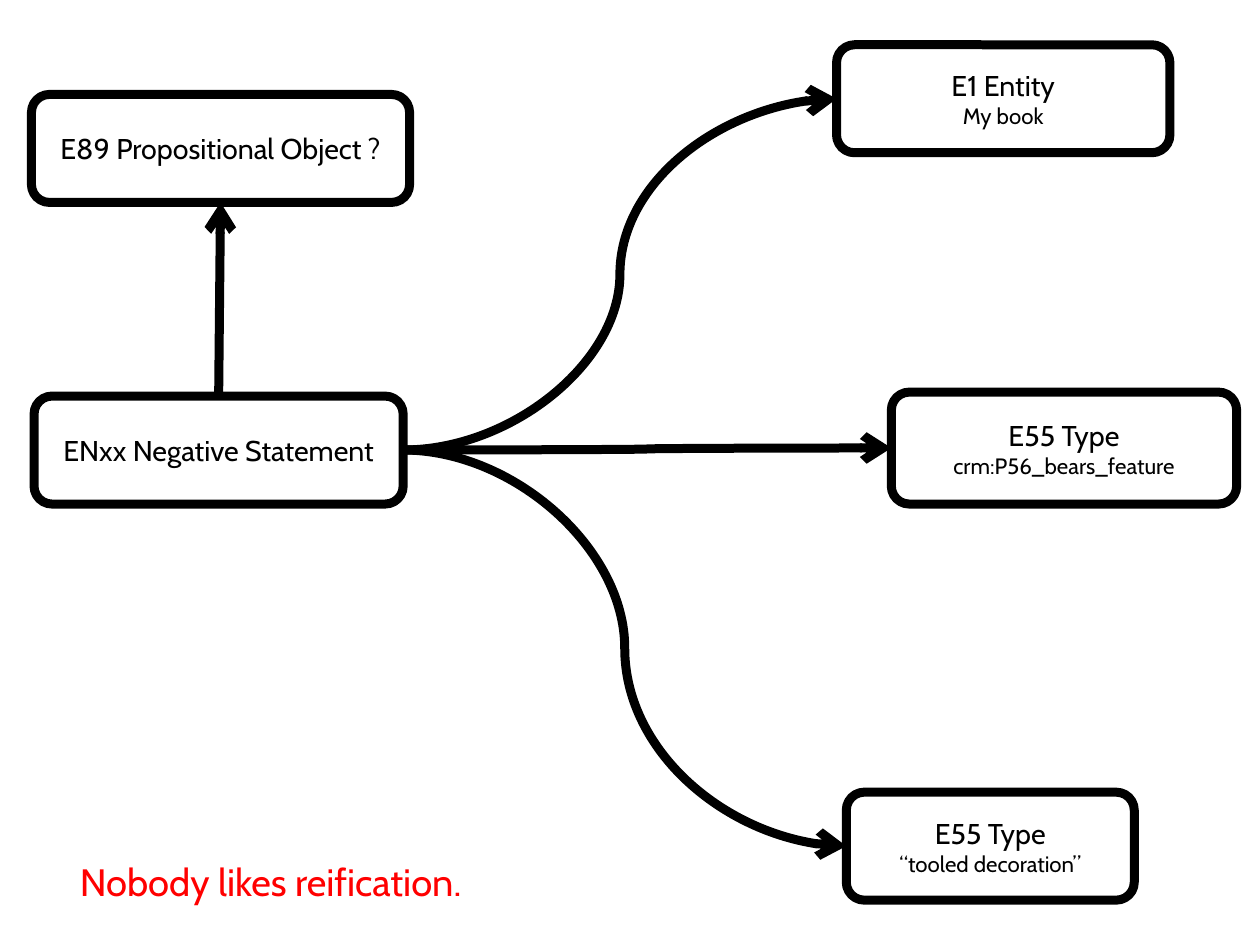
import pptx
import pptx.util
import pptx.dml.color
import pptx.enum.shapes
import pptx.enum.text
import pptx.oxml
import pptx.oxml.ns

Pt = pptx.util.Pt
BLACK, RED = "000000", "FF0000"
FONT = "Cabin"
STROKE = 5.67
CORNER = 11.3

ENTITIES = {
    "statement": (["ENxx Negative Statement"], (21.5, 249.5, 232.5, 68)),
    "proposition": (["E89 Propositional Object ?"], (19.8, 59.5, 238.2, 68)),
    "book": (["E1 Entity", "My book"], (527, 28.2, 210, 68)),
    "property": (["E55 Type", "crm:P56_bears_feature"], (561.5, 247, 217.5, 70.5)),
    "decoration": (["E55 Type", "“tooled decoration”"], (533.1, 499, 181.4, 68)),
}
TOP, LEFT, BOTTOM, RIGHT = range(4)
RELATIONS = [
    ("decoration", "CURVE", RIGHT, LEFT),
    ("book", "CURVE", RIGHT, LEFT),
    ("property", "CURVE", RIGHT, LEFT),
    ("proposition", "STRAIGHT", TOP, BOTTOM),
]
REMARK = ("Nobody likes reification.", (43.2, 537.4, 277.2, 33.8))

SLIDE_FORMAT = {"slide_width": Pt(793.7), "slide_height": Pt(595.28)}
ENTITY_FRAME = {
    "margin_left": Pt(10), "margin_right": Pt(10),
    "margin_top": Pt(6.5), "margin_bottom": Pt(6.5),
    "word_wrap": False,
    "vertical_anchor": pptx.enum.text.MSO_ANCHOR.MIDDLE,
}
REMARK_FRAME = {
    "word_wrap": False,
    "auto_size": pptx.enum.text.MSO_AUTO_SIZE.SHAPE_TO_FIT_TEXT,
}


def color(hex_value):
    return pptx.dml.color.RGBColor.from_string(hex_value)


def apply(target, values):
    for key, value in values.items():
        setattr(target, key, value)


def write(frame, lines, sizes, hue, align, frame_format):
    apply(frame, frame_format)
    for index, (words, size) in enumerate(zip(lines, sizes)):
        paragraph = frame.add_paragraph() if index else frame.paragraphs[0]
        paragraph.alignment = align
        run = paragraph.add_run()
        run.text = words
        apply(run.font, {"name": FONT, "size": Pt(size)})
        run.font.color.rgb = color(hue)


def stroke(line):
    line.width = Pt(STROKE)
    line.color.rgb = color(BLACK)


def add_entity(slide, lines, bounds):
    entity = slide.shapes.add_shape(
        pptx.enum.shapes.MSO_SHAPE.ROUNDED_RECTANGLE, *map(Pt, bounds))
    entity.adjustments[0] = CORNER / min(bounds[2:])
    entity.shadow.inherit = False
    entity.fill.background()
    stroke(entity.line)
    write(entity.text_frame, lines, (18, 14), BLACK,
          pptx.enum.text.PP_ALIGN.CENTER, ENTITY_FRAME)
    return entity


def add_relation(slide, source, target, route, source_side, target_side):
    relation = slide.shapes.add_connector(
        getattr(pptx.enum.shapes.MSO_CONNECTOR, route), 0, 0, 0, 0)
    relation.begin_connect(source, source_side)
    relation.end_connect(target, target_side)
    stroke(relation.line)
    namespace = pptx.oxml.ns.nsdecls("a")
    relation.line._get_or_add_ln().append(
        pptx.oxml.parse_xml(f'<a:tailEnd {namespace} type="arrow"/>'))
    relation._element.spPr.append(pptx.oxml.parse_xml(f"<a:effectLst {namespace}/>"))


def main():
    presentation = pptx.Presentation()
    apply(presentation, SLIDE_FORMAT)
    slide = presentation.slides.add_slide(presentation.slide_layouts[6])

    entities = {key: add_entity(slide, lines, bounds)
                for key, (lines, bounds) in ENTITIES.items()}
    for target, route, source_side, target_side in RELATIONS:
        add_relation(slide, entities["statement"], entities[target],
                     route, source_side, target_side)

    words, bounds = REMARK
    remark = slide.shapes.add_textbox(*map(Pt, bounds))
    write(remark.text_frame, [words], [24], RED,
          pptx.enum.text.PP_ALIGN.LEFT, REMARK_FRAME)

    presentation.save("out.pptx")


if __name__ == "__main__":
    main()
